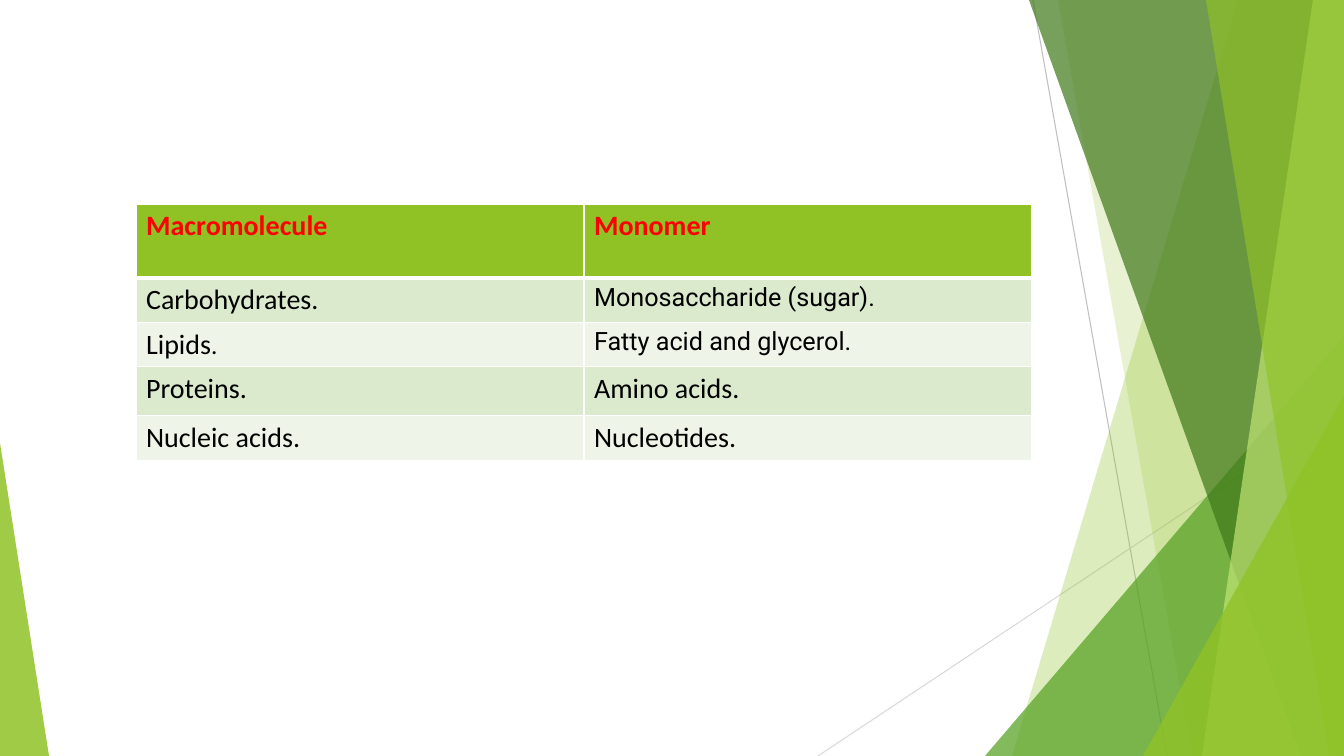
from dataclasses import dataclass

from lxml.etree import SubElement
from pptx import Presentation
from pptx.dml.color import RGBColor
from pptx.enum.shapes import MSO_CONNECTOR, MSO_SHAPE
from pptx.oxml.ns import qn
from pptx.util import Emu, Pt

WIDTH, HEIGHT = 1344, 756
SCALE = 12192000 / WIDTH


@dataclass(frozen=True)
class Theme:
    lime: str = "90C226"
    pale_lime: str = "C0E474"
    green: str = "54A021"
    dark_green: str = "3F7819"
    line_dark: str = "BFBFBF"
    line_light: str = "D9D9D9"
    band_dark: str = "DBE9CD"
    band_light: str = "EEF4E8"
    border: str = "FFFFFF"
    heading: str = "FF0000"
    body: str = "000000"
    main_font: str = "Calibri"
    alternate_font: str = "Roboto"
    main_size: int = 20
    small_size: int = 18


THEME = Theme()
MAIN = (THEME.main_font, THEME.main_size)
ALTERNATE = (THEME.alternate_font, THEME.small_size)
FULL_STOP = (THEME.main_font, THEME.small_size)

ROWS = [
    (74, [("Macromolecule", MAIN)], [("Monomer", MAIN)]),
    (44, [("Carbohydrates.", MAIN)], [("Monosaccharide (sugar).", ALTERNATE)]),
    (44, [("Lipids", MAIN), (".", FULL_STOP)], [("Fatty acid and glycerol.", ALTERNATE)]),
    (49, [("Proteins.", MAIN)], [("Amino acids.", MAIN)]),
    (44, [("Nucleic acids.", MAIN)], [("Nucleotides.", MAIN)]),
]


def px(value):
    return Emu(round(value * SCALE))


def add_line(page, start, end, color):
    line = page.shapes.add_connector(MSO_CONNECTOR.STRAIGHT, *map(px, start + end))
    line.line.color.rgb = RGBColor.from_string(color)
    line.line.width = Pt(0.75)
    SubElement(line._element.spPr, qn("a:effectLst"))


def paint(shape, color, opacity):
    shape.shadow.inherit = False
    shape.line.fill.background()
    shape.fill.solid()
    shape.fill.fore_color.rgb = RGBColor.from_string(color)
    tint = shape._element.spPr.find(".//" + qn("a:srgbClr"))
    SubElement(tint, qn("a:alpha"), val=str(opacity * 1000))


def add_facet(page, top_left, bottom_left, color, opacity):
    outline = page.shapes.build_freeform(top_left, 0, scale=SCALE)
    outline.add_line_segments([(WIDTH, 0), (WIDTH, HEIGHT), (bottom_left, HEIGHT)], close=True)
    paint(outline.convert_to_shape(), color, opacity)


def add_corner(page, left, top, width, apex, color, opacity):
    box = map(px, (left, top, width, HEIGHT - top))
    corner = page.shapes.add_shape(MSO_SHAPE.ISOSCELES_TRIANGLE, *box)
    corner.adjustments[0] = apex
    paint(corner, color, opacity)


def add_borders(cell, top, bottom):
    properties = cell._tc.get_or_add_tcPr()
    for side, points in (("L", 1), ("R", 1), ("T", top), ("B", bottom)):
        border = SubElement(properties, qn(f"a:ln{side}"), w=str(Pt(points)))
        fill = SubElement(border, qn("a:solidFill"))
        SubElement(fill, qn("a:srgbClr"), val=THEME.border)


def write_cell(cell, spans, color, bold):
    para = cell.text_frame.paragraphs[0]
    for text, (font, size) in spans:
        span = para.add_run()
        span.text = text
        span.font.name = font
        span.font.size = Pt(size)
        span.font.bold = bold
        span.font.color.rgb = RGBColor.from_string(color)


def add_molecule_table(page, left, top, column_width):
    height = sum(row[0] for row in ROWS)
    box = map(px, (left, top, 2 * column_width, height))
    table = page.shapes.add_table(len(ROWS), 2, *box).table
    table.first_row = table.horz_banding = False
    for column in table.columns:
        column.width = px(column_width)
    for index, (row_height, *contents) in enumerate(ROWS):
        table.rows[index].height = px(row_height)
        header = index == 0
        band = THEME.band_dark if index % 2 else THEME.band_light
        for cell, spans in zip(table.rows[index].cells, contents):
            add_borders(cell, 3 if index == 1 else 1, 3 if header else 1)
            cell.fill.solid()
            cell.fill.fore_color.rgb = RGBColor.from_string(THEME.lime if header else band)
            write_cell(cell, spans, THEME.heading if header else THEME.body, header)


def main():
    deck = Presentation()
    deck.slide_width, deck.slide_height = px(WIDTH), px(HEIGHT)
    page = deck.slides.add_slide(deck.slide_layouts[6])

    add_line(page, (1033, 0), (1167, HEIGHT), THEME.line_dark)
    add_line(page, (WIDTH, 406), (818, HEIGHT), THEME.line_light)
    add_facet(page, 1238, 1012, THEME.lime, 30)
    add_facet(page, 1058, 1192, THEME.lime, 20)
    add_corner(page, 985, 336, 359, 1, THEME.green, 72)
    add_facet(page, 1029, 1301, THEME.dark_green, 70)
    add_facet(page, 1313, 1202, THEME.pale_lime, 70)
    add_facet(page, 1206, 1329, THEME.lime, 65)
    add_corner(page, 1143, 396, 201, 1, THEME.lime, 80)
    add_corner(page, 0, 443, 49, 0, THEME.lime, 85)
    add_molecule_table(page, 136, 204, 448)

    deck.save("out.pptx")


if __name__ == "__main__":
    main()
